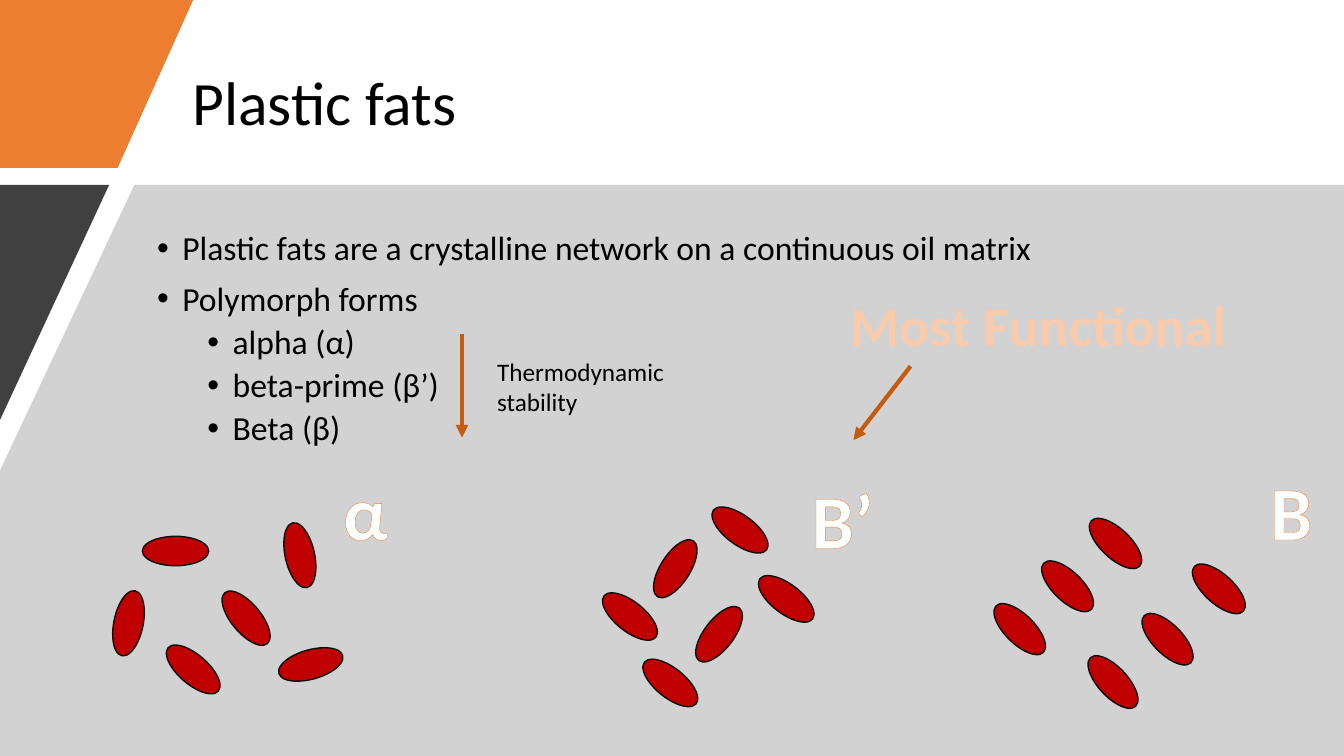
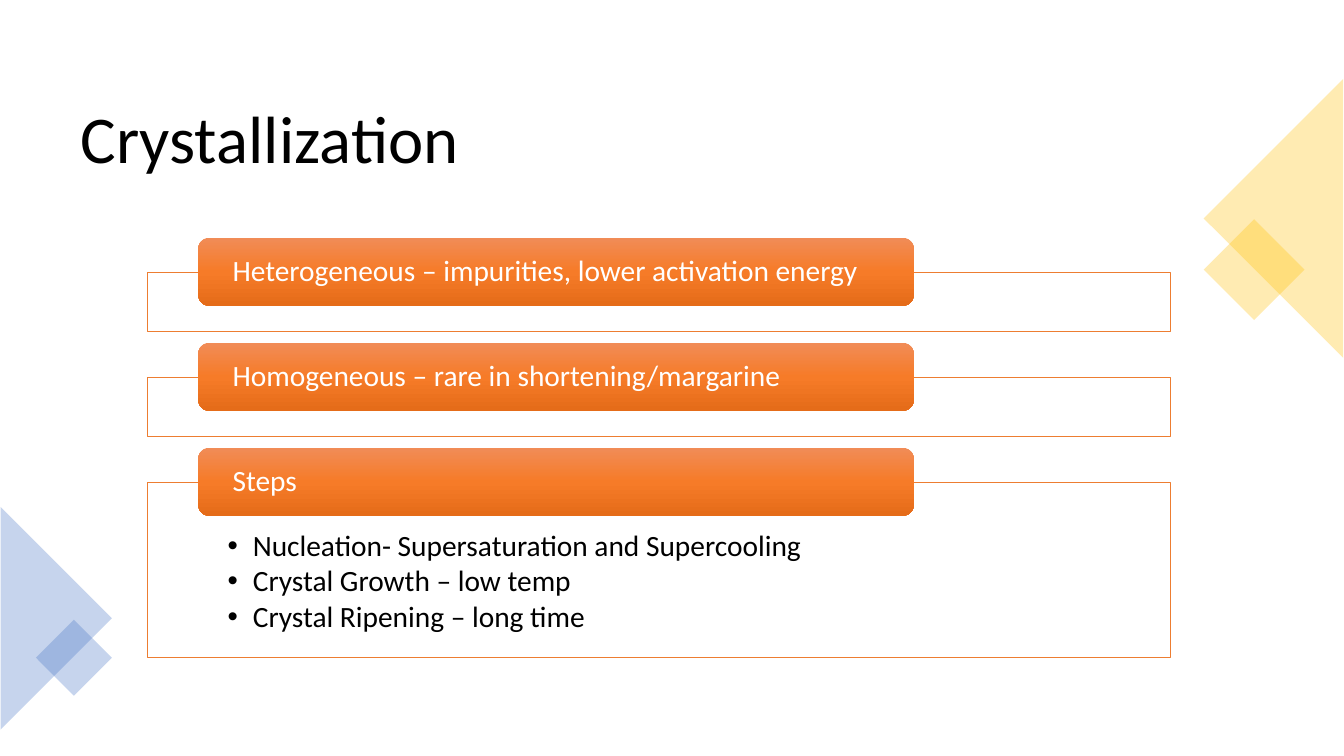
from dataclasses import dataclass

from lxml.etree import SubElement
from pptx import Presentation
from pptx.dml.color import RGBColor
from pptx.enum.shapes import MSO_CONNECTOR, MSO_SHAPE
from pptx.enum.text import MSO_ANCHOR, MSO_AUTO_SIZE, PP_ALIGN
from pptx.oxml import parse_xml
from pptx.oxml.ns import nsdecls, qn
from pptx.util import Inches, Pt

COLS, ROWS, CELL = 160, 90, 76200


@dataclass(frozen=True)
class Theme:
    font: str = "Calibri"
    ink: str = "000000"
    white: str = "FFFFFF"
    orange: str = "ED7D31"
    rust: str = "C55A11"
    peach: str = "F8CBAD"
    gray: str = "A6A6A6"
    dark: str = "404040"
    red: str = "C00000"
    rim: str = "0D0D0D"
    gold: str = "FFC000"
    blue: str = "4472C4"
    glow: tuple = ((0, "F18C57"), (50, "F67B28"), (100, "E56C19"))
    title: float = 44
    large: float = 47.7
    label: float = 54
    call: float = 40
    body: float = 24
    card: float = 21
    note: float = 18


T = Theme()
FATS = [
    (0, "Plastic fats are a crystalline network on a continuous oil matrix"),
    (0, "Polymorph forms"),
    (1, "alpha (α)"),
    (1, "beta-prime (β’)"),
    (1, "Beta (β)"),
]
GRAINS = [
    (20.9, 65.6, 0), (35.7, 66.1, 257.6), (29.3, 73.6, 50.2),
    (37, 79.1, 344.4), (23, 79.7, 40.9), (15.3, 74.2, 281.4),
    (93.6, 71.3, 37.4), (88.1, 63.1, 36.6), (85.6, 75.5, 307.5),
    (75, 73.4, 38.7), (79.8, 81.3, 38.8), (80.4, 67.7, 302.6),
    (139, 76.1, 45.4), (145.1, 70.1, 42.3), (127.1, 69.8, 44.1),
    (132.8, 64.7, 43.3), (132.5, 81.2, 47.2), (121.4, 74.9, 44.6),
]
LABELS = [("α", 39.6, 54.7, 7.8), ("Β’", 95.4, 55.7, 9.8), ("Β", 149.9, 54.7, 7.6)]
CARDS = [
    ("Heterogeneous – impurities, lower activation energy", 7),
    ("Homogeneous – rare in shortening/margarine", 7),
    ("Steps", 20.9),
]
STEPS = [
    (0, "Nucleation- Supersaturation and Supercooling"),
    (0, "Crystal Growth – low temp"),
    (0, "Crystal Ripening – long time"),
]


def grid(*cells):
    return [round(n * CELL) for n in cells]


def mid(x, y, wide, high):
    return x - wide / 2, y - high / 2, wide, high


def rgb(code):
    return RGBColor.from_string(code)


def write(shape, lines, size, color=T.ink, bold=False, align=PP_ALIGN.LEFT,
          anchor=MSO_ANCHOR.TOP, pad=(1.2, 0.6, 1.2, 0.6), wrap=True,
          lead=None, before=(0, 0), after=0, bullet=False, edge=None):
    frame = shape.text_frame
    frame.auto_size = MSO_AUTO_SIZE.NONE
    frame.word_wrap, frame.vertical_anchor = wrap, anchor
    (frame.margin_left, frame.margin_top,
     frame.margin_right, frame.margin_bottom) = grid(*pad)
    if isinstance(lines, str):
        lines = [(0, lines)]
    for spot, (level, words) in enumerate(lines):
        para = frame.add_paragraph() if spot else frame.paragraphs[0]
        para.level, para.alignment = level, align
        para.space_before, para.space_after = Pt(before[level]), Pt(after)
        if lead:
            para.line_spacing = lead
        if bullet:
            mark(para, level)
        run = para.add_run()
        run.text = words
        font = run.font
        font.name, font.size, font.bold = T.font, Pt(size), bold
        font.color.rgb = rgb(color)
        if edge:
            font._element.insert(0, parse_xml(
                f'<a:ln {nsdecls("a")} w="6600"><a:solidFill>'
                f'<a:srgbClr val="{edge}"/></a:solidFill></a:ln>'))
    return shape


def mark(para, level):
    props = para._p.get_or_add_pPr()
    props.set("marL", str(Inches(0.25 + level / 2)))
    props.set("indent", str(Inches(-0.25)))
    SubElement(props, qn("a:buFont"), typeface="Arial")
    SubElement(props, qn("a:buChar"), char="•")


def paint(shape, fill=None, alpha=None, line=None, width=1):
    shape.shadow.inherit = False
    if fill:
        shape.fill.solid()
        shape.fill.fore_color.rgb = rgb(fill)
    else:
        shape.fill.background()
    if alpha:
        tint = shape.element.spPr.find(".//" + qn("a:srgbClr"))
        SubElement(tint, qn("a:alpha"), val=str(alpha * 1000))
    if line:
        shape.line.color.rgb = rgb(line)
        shape.line.width = Pt(width)
    else:
        shape.line.fill.background()
    return shape


def shade(shape, stops):
    props = shape.element.spPr
    marks = "".join(f'<a:gs pos="{spot * 1000}"><a:srgbClr val="{tint}"/></a:gs>'
                    for spot, tint in stops)
    props.replace(props.find(qn("a:noFill")), parse_xml(
        f'<a:gradFill {nsdecls("a")} rotWithShape="1"><a:gsLst>{marks}</a:gsLst>'
        f'<a:lin ang="5400000" scaled="0"/></a:gradFill>'))


def draw(slide, kind, box, turn=0, **look):
    shape = slide.shapes.add_shape(kind, *grid(*box))
    shape.rotation = turn
    return paint(shape, **look)


def wedge(slide, points, **look):
    first, *rest = points
    form = slide.shapes.build_freeform(*first, scale=CELL)
    form.add_line_segments(rest, close=True)
    return paint(form.convert_to_shape(), **look)


def arrow(slide, start, end):
    line = slide.shapes.add_connector(MSO_CONNECTOR.STRAIGHT, *grid(*start, *end))
    line.line.color.rgb, line.line.width = rgb(T.rust), Pt(3)
    SubElement(line.line._get_or_add_ln(), qn("a:tailEnd"), type="triangle")
    SubElement(line.element.spPr, qn("a:effectLst"))


def note(slide, box, words, **look):
    return write(slide.shapes.add_textbox(*grid(*box)), words, **look)


def hold(slide, slot, box, lines, **look):
    shape = slide.placeholders[slot]
    shape.left, shape.top, shape.width, shape.height = grid(*box)
    shape.element.getparent().append(shape.element)
    return write(shape, lines, lead=0.9, **look)


def head(slide, box, words, size):
    hold(slide, 0, box, words, size=size, anchor=MSO_ANCHOR.MIDDLE)


def fats(slide):
    wedge(slide, [(0, 0), (23.2, 0), (13.7, 20.4), (0, 20.4)], fill=T.orange)
    wedge(slide, [(15.8, 22.2), (COLS, 22.2), (COLS, ROWS), (0, ROWS), (0, 56.4)],
          fill=T.gray, alpha=50)
    wedge(slide, [(0, 22.2), (12.7, 22.2), (0, 49.7)], fill=T.dark)
    head(slide, (21.7, 4.8, 122.9, 15.6), "Plastic fats", T.title)
    hold(slide, 1, (17.5, 27, 122.9, 53), FATS, size=T.body,
         before=(10, 5), bullet=True)
    arrow(slide, (55, 39.8), (55, 52.1))
    note(slide, (58, 41.8, 26, 8.5), "Thermodynamic stability", size=T.note)
    for x, y, turn in GRAINS:
        draw(slide, MSO_SHAPE.OVAL, mid(x, y, 7.9, 3.5), turn,
             fill=T.red, line=T.rim)
    for words, x, y, wide in LABELS:
        note(slide, (x, y, wide, 12.1), words, size=T.label, color=T.white,
             bold=True, align=PP_ALIGN.CENTER, wrap=False, edge=T.orange)
    note(slide, (100, 34, 47.2, 9.4), "Most Functional", size=T.call,
         color=T.peach, bold=True, align=PP_ALIGN.CENTER, wrap=False)
    arrow(slide, (108.4, 43.6), (101.6, 52.4))


def corner(slide, tip, turn, wide, gem, side, tint):
    draw(slide, MSO_SHAPE.ISOSCELES_TRIANGLE, mid(*tip, wide, wide / 2), turn,
         fill=tint, alpha=30)
    draw(slide, MSO_SHAPE.RECTANGLE, mid(*gem, side, side), 45,
         fill=tint, alpha=30)


def card(slide, top, words, high):
    draw(slide, MSO_SHAPE.RECTANGLE, (17.6, top, 121.7, high),
         line=T.orange, width=0.5)
    tab = draw(slide, MSO_SHAPE.ROUNDED_RECTANGLE, (23.6, top - 4.1, 85.2, 8.1))
    shade(tab, T.glow)
    write(tab, words, size=T.card, color=T.white, anchor=MSO_ANCHOR.MIDDLE,
          pad=(3.7, 0, 3.7, 0), lead=0.9)


def crystal(slide):
    head(slide, (8.4, 10.8, 143.2, 12.2), "Crystallization", T.large)
    corner(slide, (151.6, 26), 270, 33.2, (149.3, 32.1), 8.5, T.gold)
    corner(slide, (6.7, 73.6), 90, 26.5, (8.8, 78.3), 6.4, T.blue)
    for row, (words, high) in enumerate(CARDS):
        card(slide, 32.4 + row * 12.5, words, high)
    hold(slide, 1, (17.6, 57.4, 121.7, 20.9), STEPS, size=T.card,
         pad=(9.5, 5.8, 9.5, 1.9), after=2.7, bullet=True)


def main():
    deck = Presentation()
    deck.slide_width, deck.slide_height = grid(COLS, ROWS)
    for build in (fats, crystal):
        build(deck.slides.add_slide(deck.slide_layouts[1]))
    deck.save("out.pptx")


if __name__ == "__main__":
    main()
